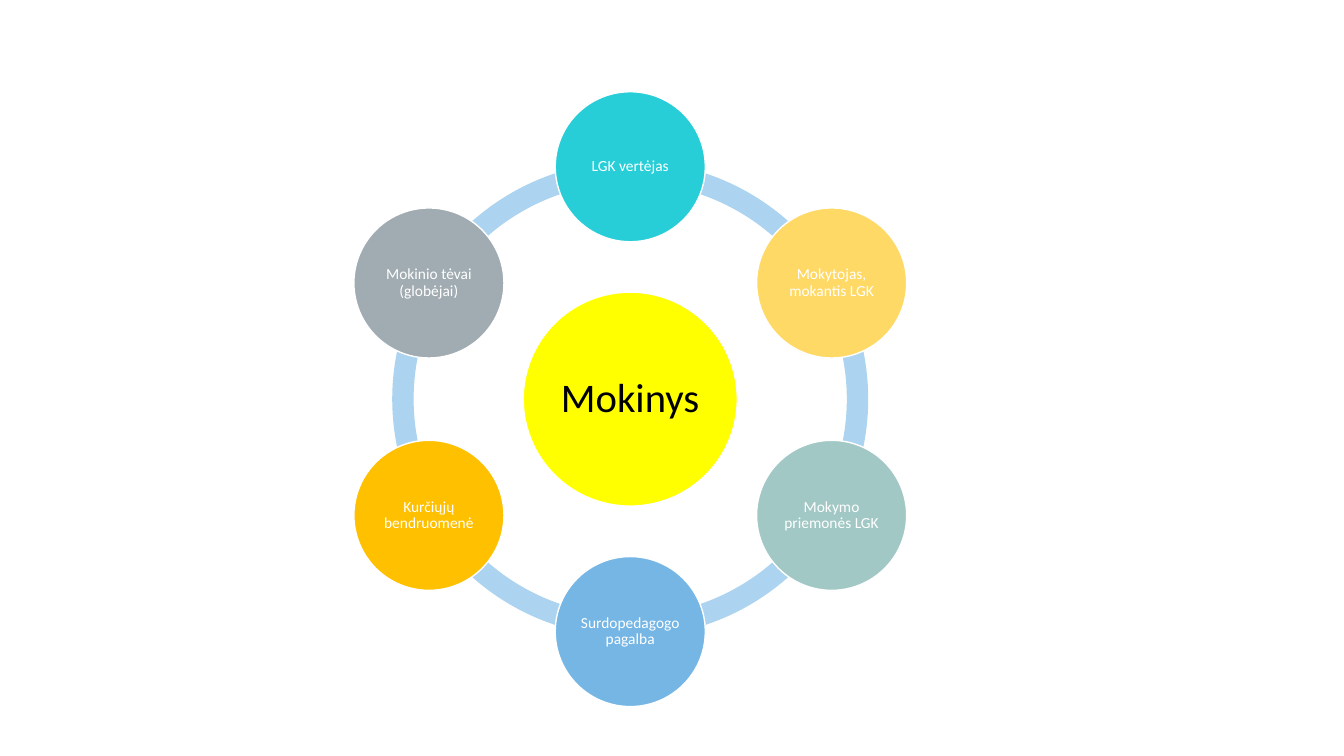
from math import cos, radians, sin

from pptx import Presentation
from pptx.dml.color import RGBColor
from pptx.enum.shapes import MSO_SHAPE
from pptx.enum.text import MSO_ANCHOR, PP_ALIGN
from pptx.util import Inches, Pt

WHITE = RGBColor(0xFF, 0xFF, 0xFF)
BLACK = RGBColor(0x00, 0x00, 0x00)
YELLOW = RGBColor(0xFF, 0xFF, 0x00)
RING_BLUE = RGBColor(0xAC, 0xD3, 0xEF)
TURQUOISE = RGBColor(0x27, 0xCE, 0xD7)
SAND = RGBColor(0xFF, 0xD9, 0x66)
SAGE = RGBColor(0xA1, 0xC8, 0xC5)
SKY = RGBColor(0x75, 0xB6, 0xE5)
AMBER = RGBColor(0xFF, 0xC0, 0x00)
GREY = RGBColor(0xA1, 0xAC, 0xB2)

FONT = "Calibri"
SUPPORTERS = [
    ("LGK vertėjas", TURQUOISE),
    ("Mokytojas, mokantis LGK", SAND),
    ("Mokymo priemonės LGK", SAGE),
    ("Surdopedagogo pagalba", SKY),
    ("Kurčiųjų bendruomenė", AMBER),
    ("Mokinio tėvai (globėjai)", GREY),
]
ARC_UNITS_PER_DEGREE = 0.6
RING_THICKNESS = 0.045


def add_round_shape(shapes, preset, center_x, center_y, diameter, fill):
    shape = shapes.add_shape(
        preset,
        int(center_x - diameter / 2),
        int(center_y - diameter / 2),
        int(diameter),
        int(diameter),
    )
    shape.shadow.inherit = False
    shape.fill.solid()
    shape.fill.fore_color.rgb = fill
    return shape


def add_arc(shapes, center_x, center_y, diameter, start, sweep):
    arc = add_round_shape(
        shapes, MSO_SHAPE.BLOCK_ARC, center_x, center_y, diameter, RING_BLUE
    )
    arc.line.fill.background()
    arc.adjustments[0] = start * ARC_UNITS_PER_DEGREE
    arc.adjustments[1] = (start + sweep) % 360 * ARC_UNITS_PER_DEGREE
    arc.adjustments[2] = RING_THICKNESS


def add_circle(shapes, center_x, center_y, diameter, fill, text, size, color, inset):
    circle = add_round_shape(
        shapes, MSO_SHAPE.OVAL, center_x, center_y, diameter, fill
    )
    circle.line.color.rgb = WHITE
    circle.line.width = Pt(1)
    frame = circle.text_frame
    frame.word_wrap = True
    frame.vertical_anchor = MSO_ANCHOR.MIDDLE
    frame.margin_left = frame.margin_right = inset
    frame.margin_top = frame.margin_bottom = inset
    frame.text = text
    paragraph = frame.paragraphs[0]
    paragraph.alignment = PP_ALIGN.CENTER
    paragraph.line_spacing = 0.9
    paragraph.font.name = FONT
    paragraph.font.size = Pt(size)
    paragraph.font.color.rgb = color


def add_support_ring(slide, left, top, height):
    shapes = slide.shapes.add_group_shape().shapes
    node_diameter = height * 0.244
    orbit = (height - node_diameter) / 2
    step = 360 / len(SUPPORTERS)
    center_x = left + orbit * cos(radians(step / 2)) + node_diameter / 2
    center_y = top + height / 2

    for index in range(len(SUPPORTERS)):
        start = (210 - index * step) % 360
        add_arc(shapes, center_x, center_y, height * 0.774, start, step)

    add_circle(
        shapes, center_x, center_y, height * 0.348,
        YELLOW, "Mokinys", 29, BLACK, Inches(0.04),
    )
    for index, (label, fill) in enumerate(SUPPORTERS):
        angle = radians(index * step - 90)
        add_circle(
            shapes,
            center_x + orbit * cos(angle),
            center_y + orbit * sin(angle),
            node_diameter, fill, label, 11, WHITE, Inches(0.02),
        )


def main():
    presentation = Presentation()
    presentation.slide_width = Inches(13.33)
    presentation.slide_height = Inches(7.5)
    slide = presentation.slides.add_slide(presentation.slide_layouts[6])
    add_support_ring(slide, Inches(3.51), Inches(0.91), Inches(6.1))
    presentation.save("out.pptx")


if __name__ == "__main__":
    main()
